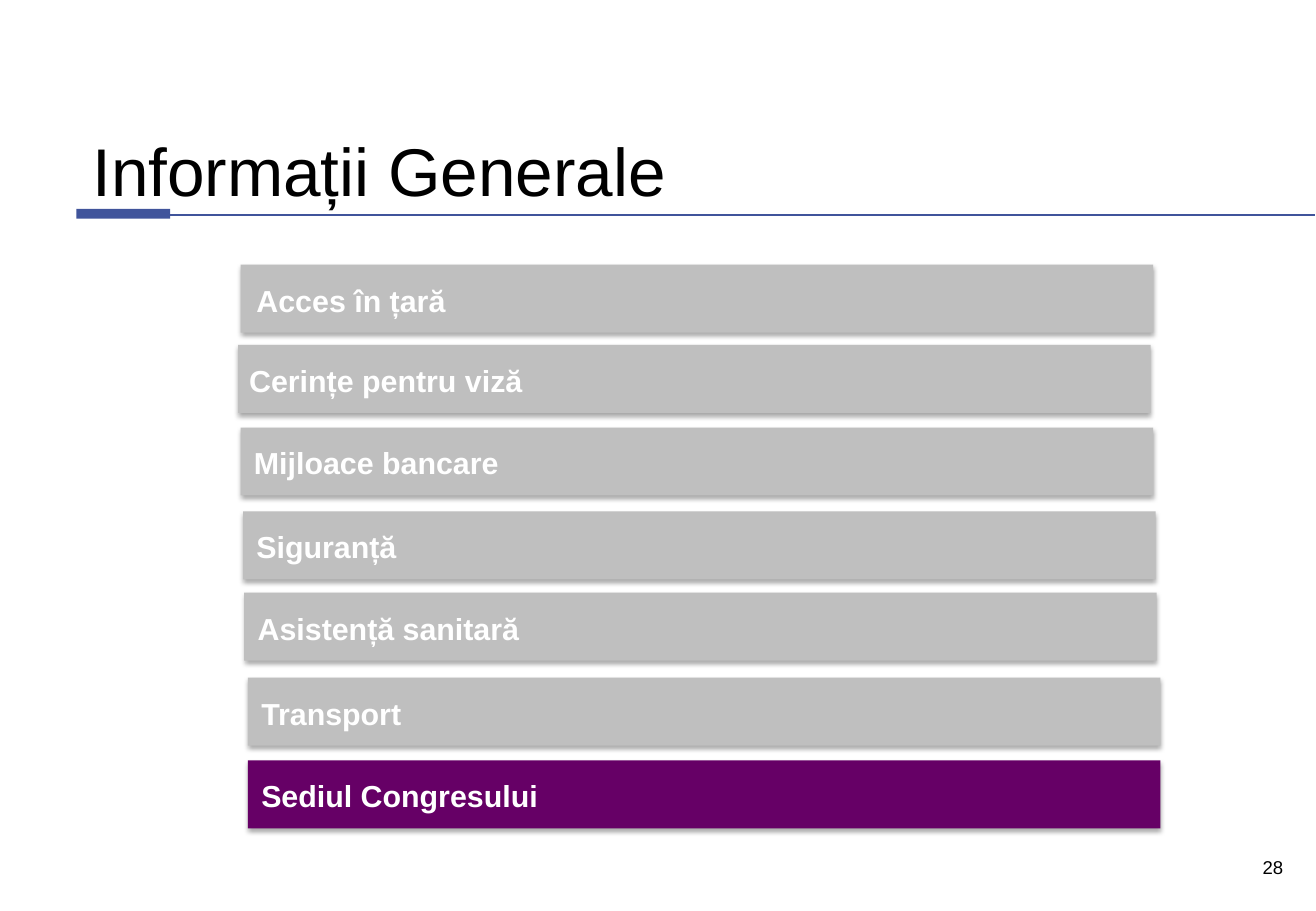
from lxml.etree import SubElement
from pptx import Presentation
from pptx.dml.color import RGBColor
from pptx.enum.shapes import MSO_CONNECTOR, MSO_SHAPE
from pptx.enum.text import MSO_ANCHOR, PP_ALIGN
from pptx.oxml import parse_xml
from pptx.oxml.ns import nsdecls, qn
from pptx.util import Emu, Pt

PX = 9144
COLOURS = {"ink": "000000", "white": "FFFFFF", "rule": "40549B",
           "bar": "BFBFBF", "current": "660066"}
TOPICS = [
    ("Acces în țară", 198, 218, 202),
    ("Cerințe pentru viză", 196, 284, 196),
    ("Mijloace bancare", 198, 352, 200),
    ("Siguranță", 200, 421, 202),
    ("Asistență sanitară", 201, 488, 203),
    ("Transport", 204, 558, 206),
    ("Sediul Congresului", 204, 626, 206),
]


def px(*lengths):
    """Turn px lengths into EMU."""
    return [Emu(length * PX) for length in lengths]


def colour(name):
    """Look up a named colour."""
    return RGBColor.from_string(COLOURS[name])


def write(shape, text, size, ink="ink", bold=False, align=PP_ALIGN.LEFT,
          spacing=1.0, insets=(10, 5, 10, 5)):
    """Put one formatted paragraph into a shape."""
    frame = shape.text_frame
    frame.word_wrap = True
    frame.vertical_anchor = MSO_ANCHOR.TOP
    (frame.margin_left, frame.margin_top,
     frame.margin_right, frame.margin_bottom) = px(*insets)
    para = frame.paragraphs[0]
    para.alignment = align
    para.line_spacing = spacing
    para.space_before = Pt(0)
    span = para.add_run()
    span.text = text
    span.font.name = "Arial"
    span.font.size = Pt(size)
    span.font.bold = bold
    span.font.color.rgb = colour(ink)


def add_block(page, box, fill):
    """Add a plain filled rectangle."""
    block = page.shapes.add_shape(MSO_SHAPE.RECTANGLE, *px(*box))
    block.shadow.inherit = False
    block.fill.solid()
    block.fill.fore_color.rgb = colour(fill)
    block.line.fill.background()
    return block


def add_shadow(block):
    """Give a block a soft shadow straight below it."""
    effects = block.element.spPr.find(qn("a:effectLst"))
    effects.append(parse_xml(
        f'<a:outerShdw {nsdecls("a")} blurRad="39370" dist="22860" dir="5400000" '
        'rotWithShape="0"><a:srgbClr val="000000"><a:alpha val="35000"/>'
        '</a:srgbClr></a:outerShdw>'))


def add_heading(page, box, text):
    """Place the title with its accent and rule below."""
    left, top, width, height = box
    title = page.shapes.title
    title.left, title.top, title.width, title.height = px(*box)
    write(title, text, 40, insets=(10, 11, 10, 0))
    add_block(page, (left - 3, top + height + 6, 77, 8), "rule")
    level = top + height + 11
    rule = page.shapes.add_connector(
        MSO_CONNECTOR.STRAIGHT, *px(left + 24, level, 1082, level))
    rule.line.color.rgb = colour("rule")
    rule.line.width = Pt(0.75)
    SubElement(rule.element.spPr, qn("a:effectLst"))


def add_topic(page, box, text, label_left, fill):
    """Place one topic bar and its label."""
    left, top, width, height = box
    add_shadow(add_block(page, box, fill))
    label = page.shapes.add_textbox(*px(label_left, top + 5, 695, 40))
    write(label, text, 18, ink="white", bold=True, spacing=1.1,
          insets=(9, 6, 9, 4))


def add_page_number(page, box, text):
    """Place the page number, aligned right."""
    write(page.shapes.add_textbox(*px(*box)), text, 11, align=PP_ALIGN.RIGHT)


def main():
    """Build and save the deck."""
    deck = Presentation()
    deck.slide_width, deck.slide_height = px(1083, 750)
    page = deck.slides.add_slide(deck.slide_layouts[5])
    add_heading(page, (66, 95, 608, 71), "Informații Generale")
    for text, left, top, label_left in TOPICS:
        fill = "current" if text == "Sediul Congresului" else "bar"
        add_topic(page, (left, top, 751, 56), text, label_left, fill)
    add_page_number(page, (840, 700, 226, 42), "28")
    deck.save("out.pptx")


if __name__ == "__main__":
    main()
